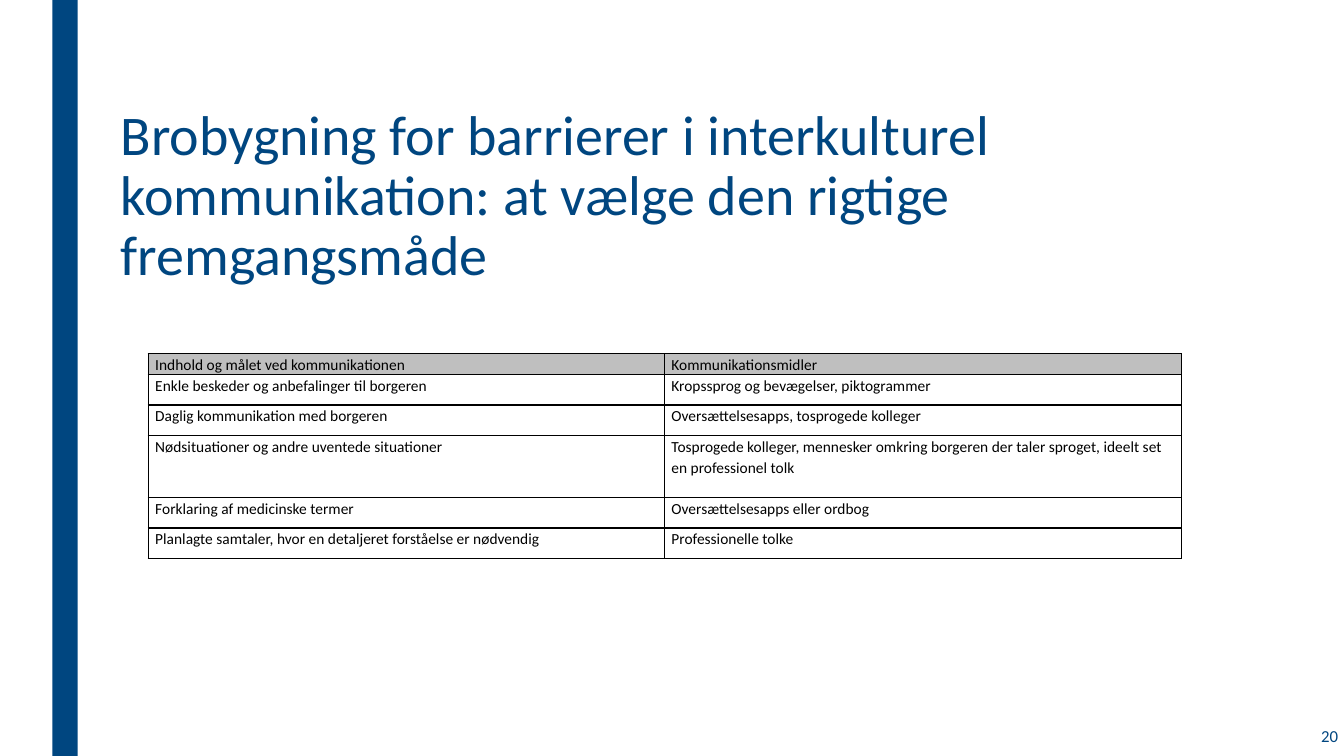
from dataclasses import dataclass

from lxml import etree
from pptx import Presentation
from pptx import util as u
from pptx.dml.color import RGBColor
from pptx.enum import shapes, text
from pptx.oxml.ns import qn


@dataclass(frozen=True)
class Theme:
    """Colours, font and type sizes of the deck."""
    font: str = "Calibri"
    navy: str = "004680"
    black: str = "000000"
    grey: str = "BFBFBF"
    title_size: int = 40
    table_size: int = 11
    number_size: int = 12


def write(frame, words, *, font, size, color, align=text.PP_ALIGN.LEFT,
          anchor=text.MSO_ANCHOR.TOP, spacing=None):
    """Put formatted words into a text frame."""
    frame.word_wrap = True
    frame.vertical_anchor = anchor
    paragraph = frame.paragraphs[0]
    paragraph.alignment = align
    if spacing is not None:
        paragraph.line_spacing = spacing
    run = paragraph.add_run()
    run.text = words
    run.font.name = font
    run.font.size = u.Pt(size)
    run.font.color.rgb = RGBColor.from_string(color)


class SlideBuilder:
    """Draws themed elements on one slide."""

    def __init__(self, slide, theme):
        self.slide = slide
        self.theme = theme

    def bar(self, box):
        """Add a solid navy bar."""
        bar = self.slide.shapes.add_shape(
            shapes.MSO_SHAPE.RECTANGLE, *map(u.Inches, box))
        bar.shadow.inherit = False
        bar.fill.solid()
        bar.fill.fore_color.rgb = RGBColor.from_string(self.theme.navy)
        bar.line.fill.background()

    def label(self, box, words, **style):
        """Add a navy text box."""
        frame = self.slide.shapes.add_textbox(*map(u.Inches, box)).text_frame
        write(frame, words, font=self.theme.font, color=self.theme.navy, **style)

    def table(self, box, widths, heights, rows):
        """Add a ruled table with a shaded header row."""
        grid = self.slide.shapes.add_table(
            len(rows), len(widths), *map(u.Inches, box)).table
        for column, width in zip(grid.columns, widths):
            column.width = u.Inches(width)
        for row, height, entries in zip(grid.rows, heights, rows):
            row.height = u.Inches(height)
            for cell, words in zip(row.cells, entries):
                self.cell(cell, words, header=entries is rows[0])

    def cell(self, cell, words, header):
        """Fill in and rule one table cell."""
        cell.margin_left = cell.margin_right = u.Inches(0.07)
        cell.margin_top = cell.margin_bottom = 0
        write(cell.text_frame, words, font=self.theme.font,
              size=self.theme.table_size, color=self.theme.black,
              spacing=u.Pt(15))
        properties = cell._tc.get_or_add_tcPr()
        for side in ("a:lnL", "a:lnR", "a:lnT", "a:lnB"):
            rule = etree.SubElement(properties, qn(side), w=str(u.Pt(1)))
            fill = etree.SubElement(rule, qn("a:solidFill"))
            etree.SubElement(fill, qn("a:srgbClr"), val=self.theme.black)
        if header:
            cell.fill.solid()
            cell.fill.fore_color.rgb = RGBColor.from_string(self.theme.grey)
        else:
            cell.fill.background()


def main():
    """Build and save the slide."""
    deck = Presentation()
    deck.slide_width, deck.slide_height = u.Inches(13.33), u.Inches(7.5)
    theme = Theme()
    page = SlideBuilder(deck.slides.add_slide(deck.slide_layouts[6]), theme)

    page.bar((0.52, 0, 0.25, 7.5))
    page.label((1.1, 1.01, 11.47, 1.9),
               "Brobygning for barrierer i interkulturel kommunikation: "
               "at vælge den rigtige fremgangsmåde",
               size=theme.title_size, spacing=0.89,
               anchor=text.MSO_ANCHOR.MIDDLE)
    approaches = [
        ("Indhold og målet ved kommunikationen", "Kommunikationsmidler"),
        ("Enkle beskeder og anbefalinger til borgeren",
         "Kropssprog og bevægelser, piktogrammer"),
        ("Daglig kommunikation med borgeren",
         "Oversættelsesapps, tosprogede kolleger"),
        ("Nødsituationer og andre uventede situationer",
         "Tosprogede kolleger, mennesker omkring borgeren der taler sproget, "
         "ideelt set en professionel tolk"),
        ("Forklaring af medicinske termer", "Oversættelsesapps eller ordbog"),
        ("Planlagte samtaler, hvor en detaljeret forståelse er nødvendig",
         "Professionelle tolke"),
    ]
    page.table((1.47, 3.51, 10.25, 2.01), (5.12, 5.13),
               (0.2, 0.3, 0.3, 0.62, 0.3, 0.3), approaches)
    page.label((11.62, 7.08, 1.75, 0.44), "20", size=theme.number_size,
               align=text.PP_ALIGN.RIGHT, anchor=text.MSO_ANCHOR.MIDDLE)
    deck.save("out.pptx")


if __name__ == "__main__":
    main()
